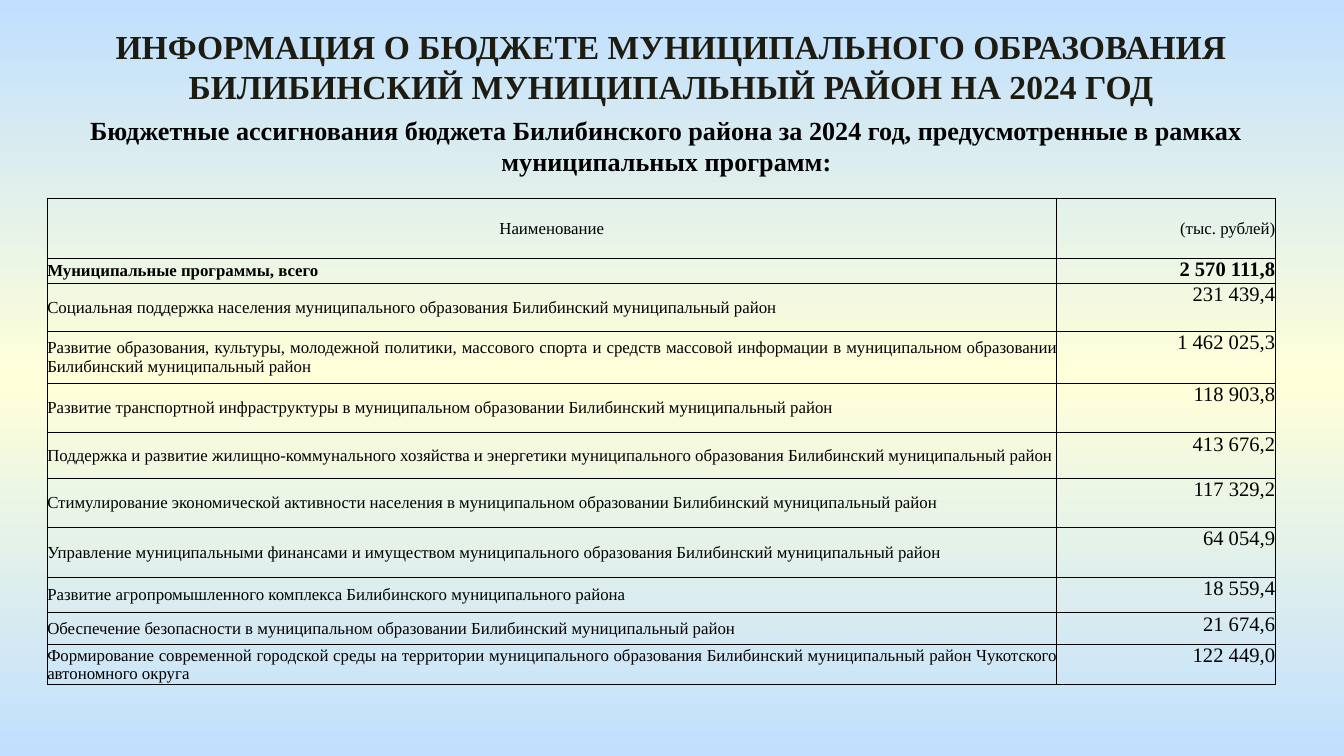
"""Build the slide with the 2024 municipal programme budget table."""
import pptx
import pptx.dml.color
import pptx.enum.text
import pptx.oxml
import pptx.oxml.ns
import pptx.util

Pt = pptx.util.Pt
ALIGN = pptx.enum.text.PP_ALIGN
ANCHOR = pptx.enum.text.MSO_ANCHOR
BLACK = pptx.dml.color.RGBColor(0x00, 0x00, 0x00)
TITLE_COLOR = pptx.dml.color.RGBColor(0x1E, 0x1C, 0x11)
SKY = pptx.dml.color.RGBColor(0xC1, 0xE0, 0xFF)
CREAM = pptx.dml.color.RGBColor(0xFF, 0xFF, 0xD9)
FONT = "Times New Roman"

ROWS = [
    ("Наименование", "(тыс. рублей)", 32.4),
    ("Муниципальные программы, всего", "2 570 111,8", 13.2),
    ("Социальная поддержка населения муниципального образования Билибинский муниципальный район", "231 439,4", 25.9),
    ("Развитие образования, культуры, молодежной политики, массового спорта и средств массовой информации "
     "в муниципальном образовании Билибинский муниципальный район", "1 462 025,3", 27.9),
    ("Развитие транспортной инфраструктуры в муниципальном образовании Билибинский муниципальный район",
     "118 903,8", 26.3),
    ("Поддержка и развитие жилищно-коммунального хозяйства и энергетики муниципального образования "
     "Билибинский муниципальный район", "413 676,2", 24.5),
    ("Стимулирование экономической активности населения в муниципальном образовании "
     "Билибинский муниципальный район", "117 329,2", 26.4),
    ("Управление муниципальными финансами и имуществом муниципального образования "
     "Билибинский муниципальный район", "64 054,9", 26.6),
    ("Развитие агропромышленного комплекса Билибинского муниципального района", "18 559,4", 19),
    ("Обеспечение безопасности в муниципальном образовании Билибинский муниципальный район", "21 674,6", 17),
    ("Формирование современной городской среды на территории муниципального образования "
     "Билибинский муниципальный район Чукотского автономного округа", "122 449,0", 21.6),
]


def write_text(frame, text, size, alignment, bold=False, color=BLACK):
    paragraph = frame.paragraphs[0]
    paragraph.alignment = alignment
    run = paragraph.add_run()
    run.text = text
    run.font.name = FONT
    run.font.size = Pt(size)
    run.font.bold = bold
    run.font.color.rgb = color


def add_borders(cell):
    properties = cell._tc.get_or_add_tcPr()
    for position, side in enumerate(("lnL", "lnR", "lnT", "lnB")):
        border = pptx.oxml.parse_xml(
            f'<a:{side} {pptx.oxml.ns.nsdecls("a")} w="{Pt(0.5)}">'
            f'<a:solidFill><a:srgbClr val="{BLACK}"/></a:solidFill></a:{side}>')
        properties.insert(position, border)


presentation = pptx.Presentation()
presentation.slide_width = Pt(720)
presentation.slide_height = Pt(405)
slide = presentation.slides.add_slide(presentation.slide_layouts[5])

background = slide.background.fill
background.gradient()
background.gradient_angle = 270
stops = background._fill._gradFill.gsLst
stops.clear()
for position, color in ((0, SKY), (50, CREAM), (100, SKY)):
    stops.append(pptx.oxml.parse_xml(
        f'<a:gs {pptx.oxml.ns.nsdecls("a")} pos="{position * 1000}"><a:srgbClr val="{color}"/></a:gs>'))

title = slide.shapes.title
title.left, title.top, title.width, title.height = Pt(25.2), Pt(10.1), Pt(668.9), Pt(51.1)
title.text_frame.word_wrap = True
title.text_frame.vertical_anchor = ANCHOR.TOP
write_text(title.text_frame, "ИНФОРМАЦИЯ О БЮДЖЕТЕ МУНИЦИПАЛЬНОГО ОБРАЗОВАНИЯ "
           "БИЛИБИНСКИЙ МУНИЦИПАЛЬНЫЙ РАЙОН НА 2024 ГОД", 18, ALIGN.CENTER, True, TITLE_COLOR)

subtitle = slide.shapes.add_textbox(Pt(22.3), Pt(57.6), Pt(669.6), Pt(41))
subtitle.text_frame.word_wrap = True
write_text(subtitle.text_frame, "Бюджетные ассигнования бюджета Билибинского района за 2024 год, "
           "предусмотренные в рамках муниципальных программ:", 14, ALIGN.CENTER, True)

table_height = sum(height for name, amount, height in ROWS)
table = slide.shapes.add_table(len(ROWS), 2, Pt(25.3), Pt(106.1), Pt(657.8), Pt(table_height)).table
table.columns[0].width = Pt(540.5)
table.columns[1].width = Pt(117.3)
for row_index, (name, amount, height) in enumerate(ROWS):
    table.rows[row_index].height = Pt(height)
    is_header = row_index == 0
    is_total = row_index == 1
    name_alignment = ALIGN.CENTER if is_header else ALIGN.LEFT if is_total else ALIGN.JUSTIFY
    name_cell, amount_cell = table.rows[row_index].cells
    for cell in (name_cell, amount_cell):
        cell.margin_left = cell.margin_top = cell.margin_right = cell.margin_bottom = 0
        cell.fill.background()
        add_borders(cell)
    name_cell.vertical_anchor = ANCHOR.MIDDLE
    amount_cell.vertical_anchor = ANCHOR.MIDDLE if is_header else ANCHOR.TOP
    write_text(name_cell.text_frame, name, 9, name_alignment, is_total)
    write_text(amount_cell.text_frame, amount, 9 if is_header else 11, ALIGN.RIGHT, is_total)

presentation.save("out.pptx")
